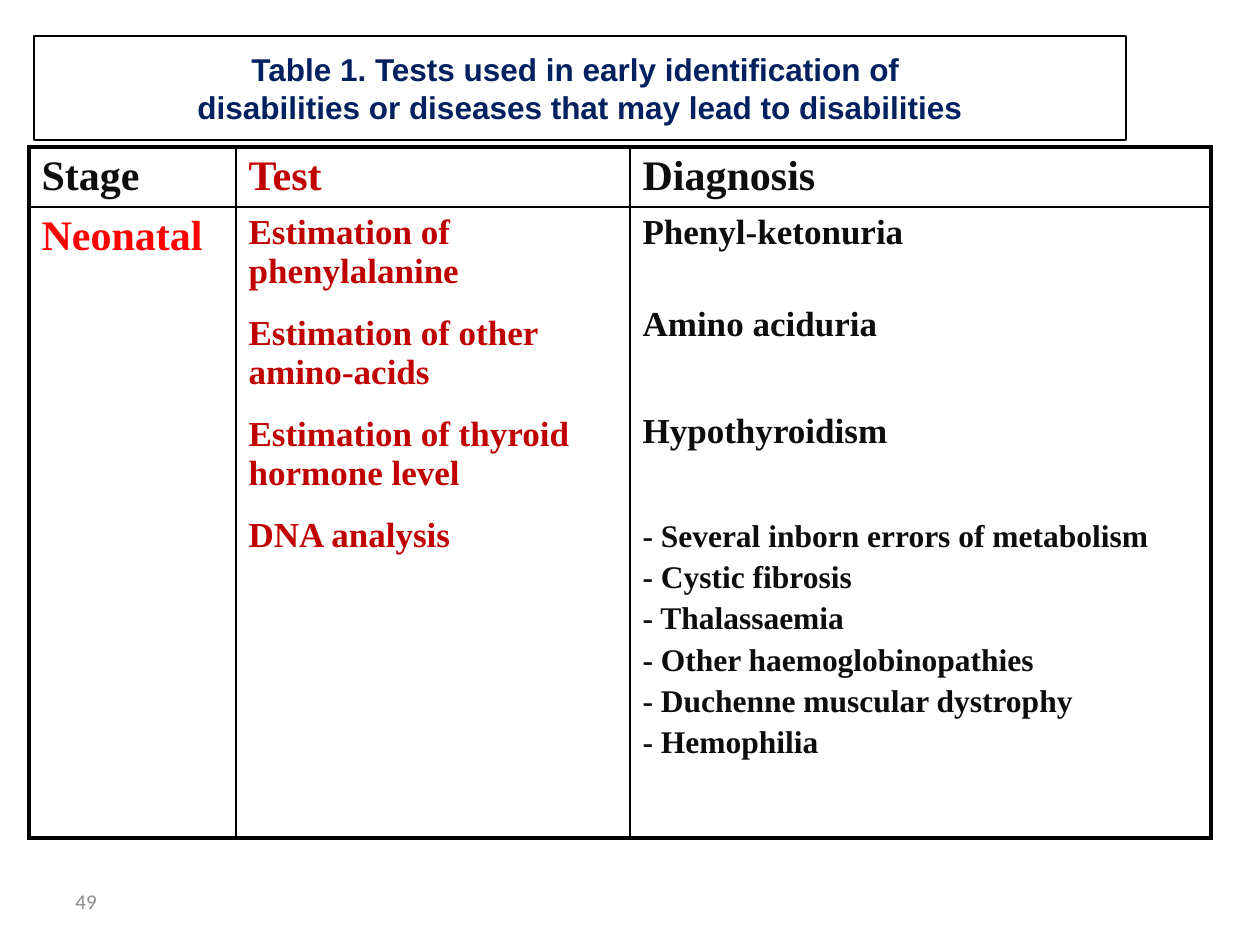
from dataclasses import dataclass

from lxml import etree
from pptx import Presentation, util as u
from pptx.dml.color import RGBColor
from pptx.enum import text
from pptx.oxml import ns


@dataclass(frozen=True)
class Theme:
    serif: str = "Times New Roman"
    sans: str = "Arial"
    footer: str = "Calibri"
    ink: str = "0D0D0D"
    dark_red: str = "C00000"
    red: str = "FF0000"
    navy: str = "002060"
    grey: str = "8C8C8C"
    border: str = "000000"
    paper: str = "FFFFFF"
    heading_size: int = 24
    body_size: int = 20
    list_size: int = 18
    footer_size: int = 12
    outer_line: float = 2.25
    inner_line: float = 1


theme = Theme()
PX = 914400 / 126  # EMU in one px


def style(paragraph, size, color, face, bold=True):
    paragraph.font.size = u.Pt(size)
    paragraph.font.color.rgb = RGBColor.from_string(color)
    paragraph.font.name = face
    paragraph.font.bold = bold


def add_border(cell, side, width):
    line = etree.SubElement(cell._tc.get_or_add_tcPr(), ns.qn(f"a:{side}"),
                            w=str(u.Pt(width)))
    fill = etree.SubElement(line, ns.qn("a:solidFill"))
    etree.SubElement(fill, ns.qn("a:srgbClr"), val=theme.border)


deck = Presentation()
deck.slide_width, deck.slide_height = u.Inches(10), u.Inches(7.5)
slide = deck.slides.add_slide(deck.slide_layouts[5])

# Boxed title
title = slide.shapes.title
title.left, title.top, title.width, title.height = [
    round(n * PX) for n in (34, 36, 1092, 104)]
title.fill.solid()
title.fill.fore_color.rgb = RGBColor.from_string(theme.paper)
title.line.color.rgb = RGBColor.from_string(theme.border)
title.line.width = u.Pt(0.75)
caption = title.text_frame
caption.text = ("Table 1. Tests used in early identification of \n"
                "disabilities or diseases that may lead to disabilities")
caption.word_wrap = False
caption.auto_size = text.MSO_AUTO_SIZE.NONE
caption.vertical_anchor = text.MSO_ANCHOR.MIDDLE
for line in caption.paragraphs:
    line.alignment = text.PP_ALIGN.CENTER
    style(line, theme.list_size, theme.navy, theme.sans)

# Cell contents: (wording, size, colour, space before in points)
head, body, small = theme.heading_size, theme.body_size, theme.list_size
tests = ["Estimation of phenylalanine", "Estimation of other amino-acids",
         "Estimation of thyroid hormone level", "DNA analysis"]
diagnoses = [("Phenyl-ketonuria", 0), ("Amino aciduria", 30.4), ("Hypothyroidism", 39)]
dna_diagnoses = ["Several inborn errors of metabolism", "Cystic fibrosis", "Thalassaemia",
                 "Other haemoglobinopathies", "Duchenne muscular dystrophy", "Hemophilia"]
rows = [
    [[("Stage", head, theme.ink, 0)],
     [("Test", head, theme.dark_red, 0)],
     [("Diagnosis", head, theme.ink, 0)]],
    [[("Neonatal", head, theme.red, 0)],
     [(test, body, theme.dark_red, 13.3 if i else 0) for i, test in enumerate(tests)],
     [(name, body, theme.ink, gap) for name, gap in diagnoses]
     + [(f"- {name}", small, theme.ink, 3.6 if i else 39)
        for i, name in enumerate(dna_diagnoses)]],
]

# Table of tests
col_widths, row_heights = (207, 394, 581), (60, 631)
table = slide.shapes.add_table(
    len(rows), len(col_widths), round(29 * PX), round(147 * PX),
    round(sum(col_widths) * PX), round(sum(row_heights) * PX)).table
table.first_row = table.horz_banding = False
for column, width in zip(table.columns, col_widths):
    column.width = round(width * PX)
for row, height in zip(table.rows, row_heights):
    row.height = round(height * PX)

for r, row in enumerate(rows):
    for c, entries in enumerate(row):
        cell = table.cell(r, c)
        outer_sides = {"lnL": c == 0, "lnR": c == len(row) - 1,
                       "lnT": r == 0, "lnB": r == len(rows) - 1}
        for side, is_outer in outer_sides.items():
            add_border(cell, side, theme.outer_line if is_outer else theme.inner_line)
        cell.fill.solid()
        cell.fill.fore_color.rgb = RGBColor.from_string(theme.paper)
        cell.text = "\n".join(entry[0] for entry in entries)
        for paragraph, (_, size, color, gap) in zip(cell.text_frame.paragraphs, entries):
            paragraph.space_before = u.Pt(gap)
            style(paragraph, size, color, theme.serif)

# Page number
page_number = slide.shapes.add_textbox(
    *[round(n * PX) for n in (63, 876, 294, 50)]).text_frame
page_number.word_wrap = True
page_number.vertical_anchor = text.MSO_ANCHOR.MIDDLE
page_number.text = "49"
style(page_number.paragraphs[0], theme.footer_size, theme.grey, theme.footer, bold=False)

deck.save("out.pptx")
